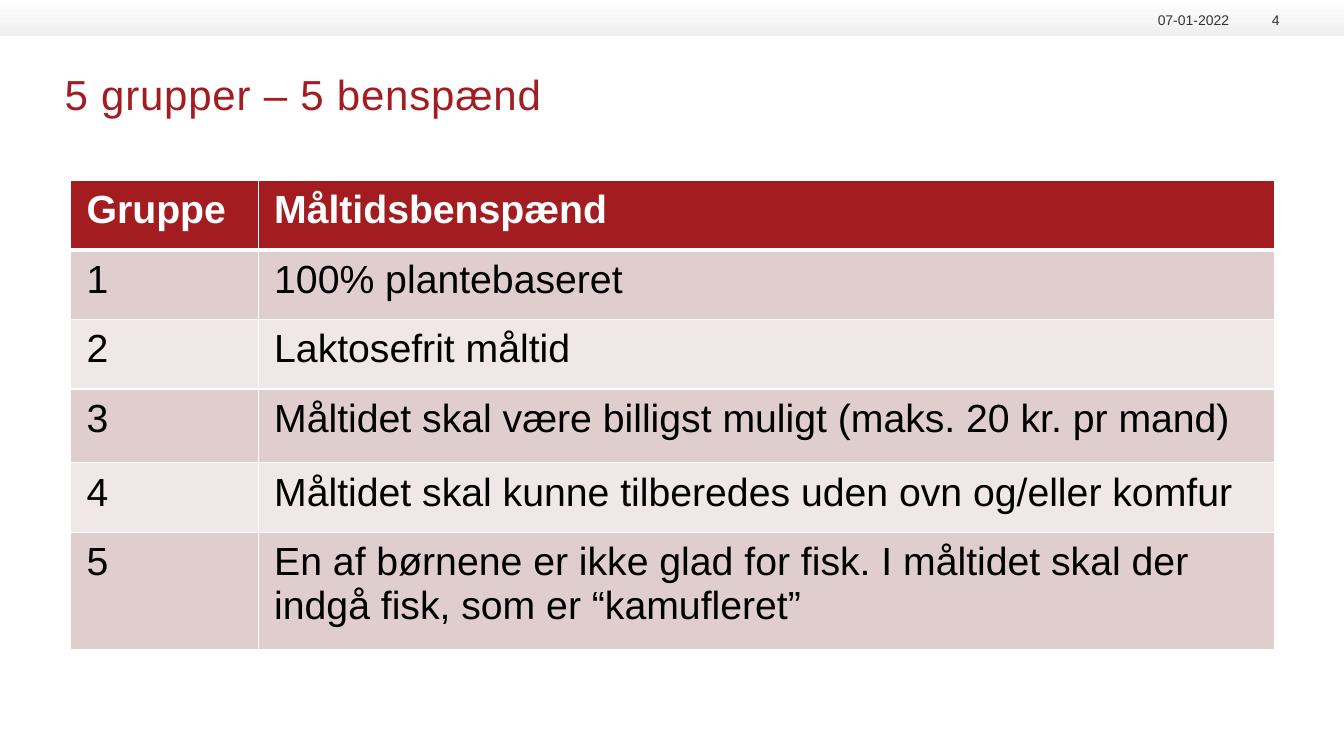
"""Build the slide that lists five groups and their meal challenges."""
from lxml.etree import SubElement
from pptx import Presentation
from pptx.dml.color import RGBColor
from pptx.enum.shapes import MSO_SHAPE
from pptx.enum.text import MSO_ANCHOR, MSO_AUTO_SIZE, PP_ALIGN
from pptx.oxml.ns import qn
from pptx.util import Inches, Pt

COLORS = {
    "red": "A31D20",
    "white": "FFFFFF",
    "band_end": "EEEFEE",
    "grey": "333333",
    "black": "000000",
    "rose": "E0CDCD",
    "pale": "F0E8E8",
}
ROWS = [
    ("Gruppe", "Måltidsbenspænd"),
    ("1", "100% plantebaseret"),
    ("2", "Laktosefrit måltid"),
    ("3", "Måltidet skal være billigst muligt (maks. 20 kr. pr mand)"),
    ("4", "Måltidet skal kunne tilberedes uden ovn og/eller komfur"),
    ("5", "En af børnene er ikke glad for fisk. I måltidet skal der "
          "indgå fisk, som er “kamufleret”"),
]
COLUMN_WIDTHS = [1.86, 10.08]
ROW_HEIGHTS = [0.69, 0.69, 0.69, 0.73, 0.69, 1.17]


def color(name):
    return RGBColor.from_string(COLORS[name])


def set_all(target, values):
    for name, value in values.items():
        setattr(target, name, value)


def style_font(font, size, color_name, bold=False):
    set_all(font, {"name": "Arial", "size": Pt(size), "bold": bold})
    font.color.rgb = color(color_name)


def fill_frame(frame, text, size, color_name, align, anchor):
    set_all(frame, {
        "word_wrap": True, "auto_size": MSO_AUTO_SIZE.NONE,
        "vertical_anchor": anchor, "margin_left": 0, "margin_right": 0,
        "margin_top": 0, "margin_bottom": 0,
    })
    para = frame.paragraphs[0]
    para.alignment = align
    span = para.add_run()
    span.text = text
    style_font(span.font, size, color_name)
    return span


def add_band(page):
    band = page.shapes.add_shape(
        MSO_SHAPE.RECTANGLE, 0, 0, Inches(13.33), Inches(0.36))
    band.shadow.inherit = False
    band.line.fill.background()
    band.fill.gradient()
    band.fill.gradient_angle = 270
    for stop, name, position in zip(
            band.fill.gradient_stops, ("white", "band_end"), (0, 1)):
        stop.color.rgb = color(name)
        stop.position = position


def set_title(page, text):
    title = page.shapes.title
    set_all(title, {"left": Inches(0.64), "top": Inches(0.68),
                    "width": Inches(12.04), "height": Inches(0.95)})
    span = fill_frame(title.text_frame, text, 30, "red",
                      PP_ALIGN.LEFT, MSO_ANCHOR.TOP)
    span.font._element.set("spc", "60")


def add_label(page, text, left, width):
    box = page.shapes.add_textbox(
        Inches(left), Inches(0.09), Inches(width), Inches(0.19))
    fill_frame(box.text_frame, text, 10, "grey",
               PP_ALIGN.RIGHT, MSO_ANCHOR.BOTTOM)


def add_borders(cell, top, bottom):
    properties = cell._tc.get_or_add_tcPr()
    for side, width in (("L", 1), ("R", 1), ("T", top), ("B", bottom)):
        line = SubElement(properties, qn(f"a:ln{side}"), w=str(Pt(width)))
        fill = SubElement(line, qn("a:solidFill"))
        SubElement(fill, qn("a:srgbClr"), val=COLORS["white"])


def style_cell(cell, text, row):
    header = row == 0
    add_borders(cell, 3 if row == 1 else 1, 3 if header else 1)
    cell.fill.solid()
    cell.fill.fore_color.rgb = color(
        "red" if header else "rose" if row % 2 else "pale")
    set_all(cell, {"margin_left": Inches(0.16), "margin_right": Inches(0.16),
                   "margin_top": Inches(0.08), "margin_bottom": Inches(0.08)})
    span = cell.text_frame.paragraphs[0].add_run()
    span.text = text
    style_font(span.font, 28, "white" if header else "black", header)


def add_challenges(page):
    table = page.shapes.add_table(
        len(ROWS), len(COLUMN_WIDTHS), Inches(0.7), Inches(1.79),
        Inches(sum(COLUMN_WIDTHS)), Inches(sum(ROW_HEIGHTS))).table
    for column, width in zip(table.columns, COLUMN_WIDTHS):
        column.width = Inches(width)
    for row, (texts, height) in enumerate(zip(ROWS, ROW_HEIGHTS)):
        table.rows[row].height = Inches(height)
        for column, text in enumerate(texts):
            style_cell(table.cell(row, column), text, row)


def main():
    deck = Presentation()
    set_all(deck, {"slide_width": Inches(13.33), "slide_height": Inches(7.5)})
    page = deck.slides.add_slide(deck.slide_layouts[5])
    add_band(page)
    set_title(page, "5 grupper – 5 benspænd")
    add_label(page, "07-01-2022", 11.3, 0.89)
    add_label(page, "4", 12.27, 0.42)
    add_challenges(page)
    deck.save("out.pptx")


if __name__ == "__main__":
    main()
